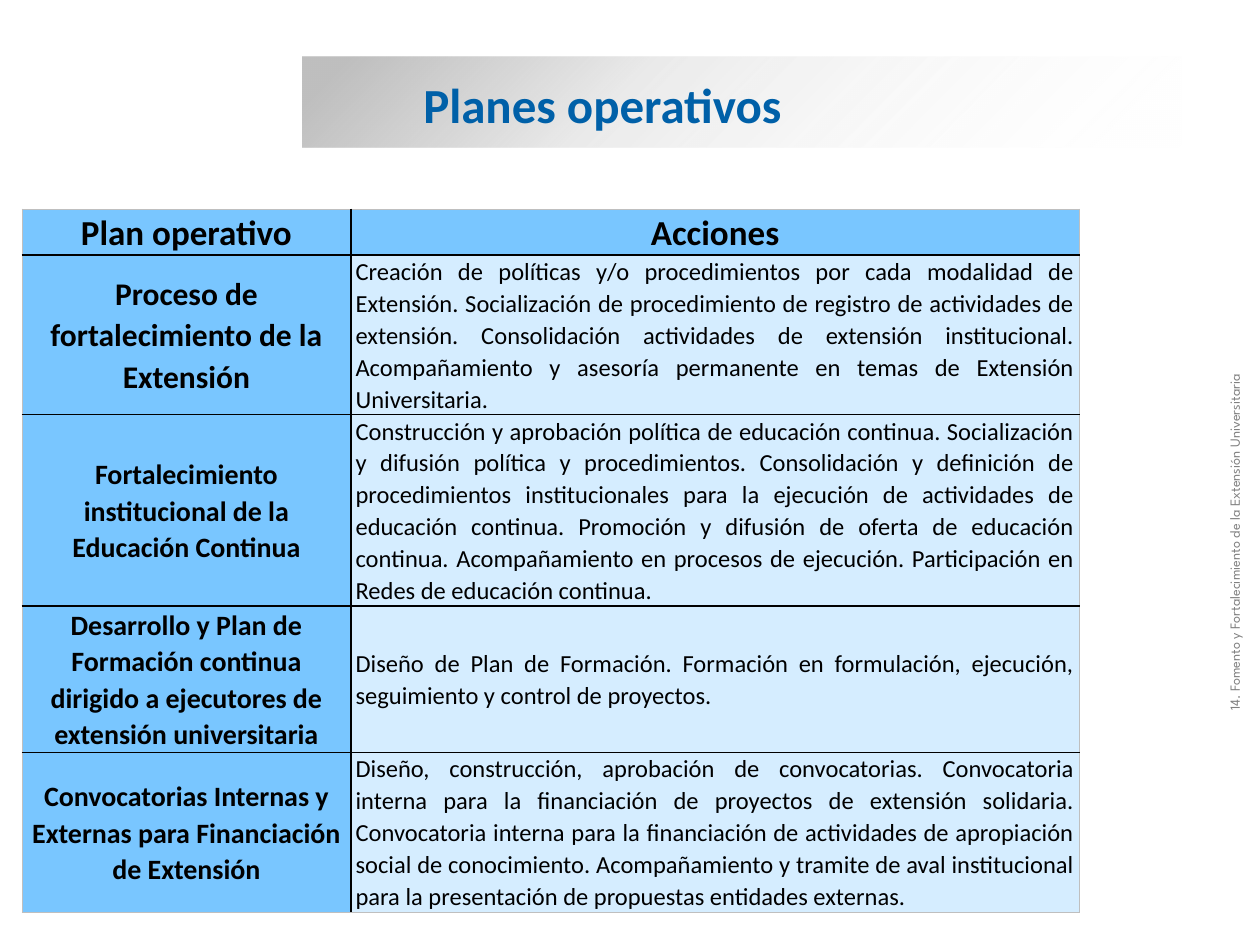
from lxml import etree
from pptx import Presentation
from pptx.dml.color import RGBColor
from pptx.enum.shapes import MSO_SHAPE
from pptx.enum.text import MSO_ANCHOR, MSO_AUTO_SIZE, PP_ALIGN
from pptx.oxml import parse_xml
from pptx.util import Pt

RECTANGLE = MSO_SHAPE.RECTANGLE
MIDDLE = MSO_ANCHOR.MIDDLE
NO_FIT = MSO_AUTO_SIZE.NONE
LEFT, CENTER, JUSTIFY = PP_ALIGN.LEFT, PP_ALIGN.CENTER, PP_ALIGN.JUSTIFY
NAMESPACE = "http://schemas.openxmlformats.org/drawingml/2006/main"
HEADER_BLUE, ACTION_BLUE = "79C6FF", "D5EDFF"


def color(value):
    return RGBColor.from_string(value)


def write(text_frame, text, size, font="Calibri", fill="000000", bold=False,
          align=LEFT, spacing=1.0):
    text_frame.word_wrap = True
    paragraph = text_frame.paragraphs[0]
    paragraph.alignment = align
    paragraph.line_spacing = spacing
    run = paragraph.add_run()
    run.text = text
    run.font.name = font
    run.font.size = Pt(size)
    run.font.bold = bold
    run.font.color.rgb = color(fill)


presentation = Presentation()
presentation.slide_width, presentation.slide_height = Pt(720), Pt(540)
slide = presentation.slides.add_slide(presentation.slide_layouts[5])
title = slide.shapes.title

band = slide.shapes.add_shape(RECTANGLE, Pt(172.8), Pt(32.4), Pt(502.5), Pt(52))
band.shadow.inherit = False
band.line.fill.background()
band.fill.background()
stops = "".join(
    f'<a:gs pos="{position * 1000}"><a:srgbClr val="{value}">'
    f'<a:alpha val="{opacity * 1000}"/></a:srgbClr></a:gs>'
    for position, value, opacity in [(5, "BFBFBF", 100), (37, "BFBFBF", 31), (100, "FFFFFF", 0)]
)
gradient = parse_xml(
    f'<a:gradFill xmlns:a="{NAMESPACE}" rotWithShape="1"><a:gsLst>{stops}</a:gsLst>'
    '<a:lin ang="2700000" scaled="0"/></a:gradFill>'
)
properties = band.element.spPr
properties.replace(properties.find(f"{{{NAMESPACE}}}noFill"), gradient)
slide.shapes._spTree.remove(band.element)
title.element.addprevious(band.element)

title.left, title.top, title.width, title.height = Pt(234.7), Pt(38.9), Pt(446.4), Pt(41)
title.text_frame.auto_size = NO_FIT
title.text_frame.vertical_anchor = MIDDLE
write(title.text_frame, "Planes operativos", 28, fill="0060A8", bold=True)

rows = [
    (25.7, 20, "Plan operativo", "Acciones"),
    (90.3, 18, "Proceso de fortalecimiento de la Extensión",
     "Creación de políticas y/o procedimientos por cada modalidad de Extensión. "
     "Socialización de procedimiento de registro de actividades de extensión. "
     "Consolidación actividades de extensión institucional. Acompañamiento y asesoría "
     "permanente en temas de Extensión Universitaria."),
    (108, 16, "Fortalecimiento institucional de la Educación Continua",
     "Construcción y aprobación política de educación continua. Socialización y difusión "
     "política y procedimientos. Consolidación y definición de procedimientos "
     "institucionales para la ejecución de actividades de educación continua. Promoción y "
     "difusión de oferta de educación continua. Acompañamiento en procesos de ejecución. "
     "Participación en Redes de educación continua."),
    (82, 16, "Desarrollo y Plan de Formación continua dirigido a ejecutores de extensión "
     "universitaria",
     "Diseño de Plan de Formación. Formación en formulación, ejecución, seguimiento y "
     "control de proyectos."),
    (90, 16, "Convocatorias Internas y Externas para Financiación de Extensión",
     "Diseño, construcción, aprobación de convocatorias. Convocatoria interna para la "
     "financiación de proyectos de extensión solidaria. Convocatoria interna para la "
     "financiación de actividades de apropiación social de conocimiento. Acompañamiento y "
     "tramite de aval institucional para la presentación de propuestas entidades externas."),
]
table = slide.shapes.add_table(len(rows), 2, Pt(12.6), Pt(119.5), Pt(604.1), Pt(396)).table
table.columns[0].width, table.columns[1].width = Pt(187.9), Pt(416.2)
last_row = len(rows) - 1

for row_index, (height, plan_size, *texts) in enumerate(rows):
    table.rows[row_index].height = Pt(height)
    for column_index, text in enumerate(texts):
        cell = table.cell(row_index, column_index)
        action = row_index > 0 and column_index == 1
        cell.margin_left = cell.margin_right = Pt(2.7)
        cell.margin_top = cell.margin_bottom = 0
        cell.vertical_anchor = MIDDLE
        cell.fill.solid()
        cell.fill.fore_color.rgb = color(ACTION_BLUE if action else HEADER_BLUE)
        write(cell.text_frame, text, 14 if action else plan_size, bold=not action,
              align=JUSTIFY if action else CENTER, spacing=1.07)
        outer_edges = {"lnL": column_index == 0, "lnR": column_index == 1,
                       "lnT": row_index == 0, "lnB": row_index == last_row}
        cell_properties = cell._tc.get_or_add_tcPr()
        for position, (edge, outer) in enumerate(outer_edges.items()):
            width = Pt(0.5) if outer else Pt(1)
            border = etree.Element(f"{{{NAMESPACE}}}{edge}", w=str(width))
            solid = etree.SubElement(border, f"{{{NAMESPACE}}}solidFill")
            etree.SubElement(solid, f"{{{NAMESPACE}}}srgbClr", val="BFBFBF" if outer else "000000")
            cell_properties.insert(position, border)

side_label = slide.shapes.add_textbox(Pt(531.4), Pt(230.4), Pt(348.5), Pt(17.3))
side_label.rotation = 270
write(side_label.text_frame, "14. Fomento y Fortalecimiento de la Extensión Universitaria", 8,
      font="League Spartan", fill="808080", align=JUSTIFY)

presentation.save("out.pptx")
